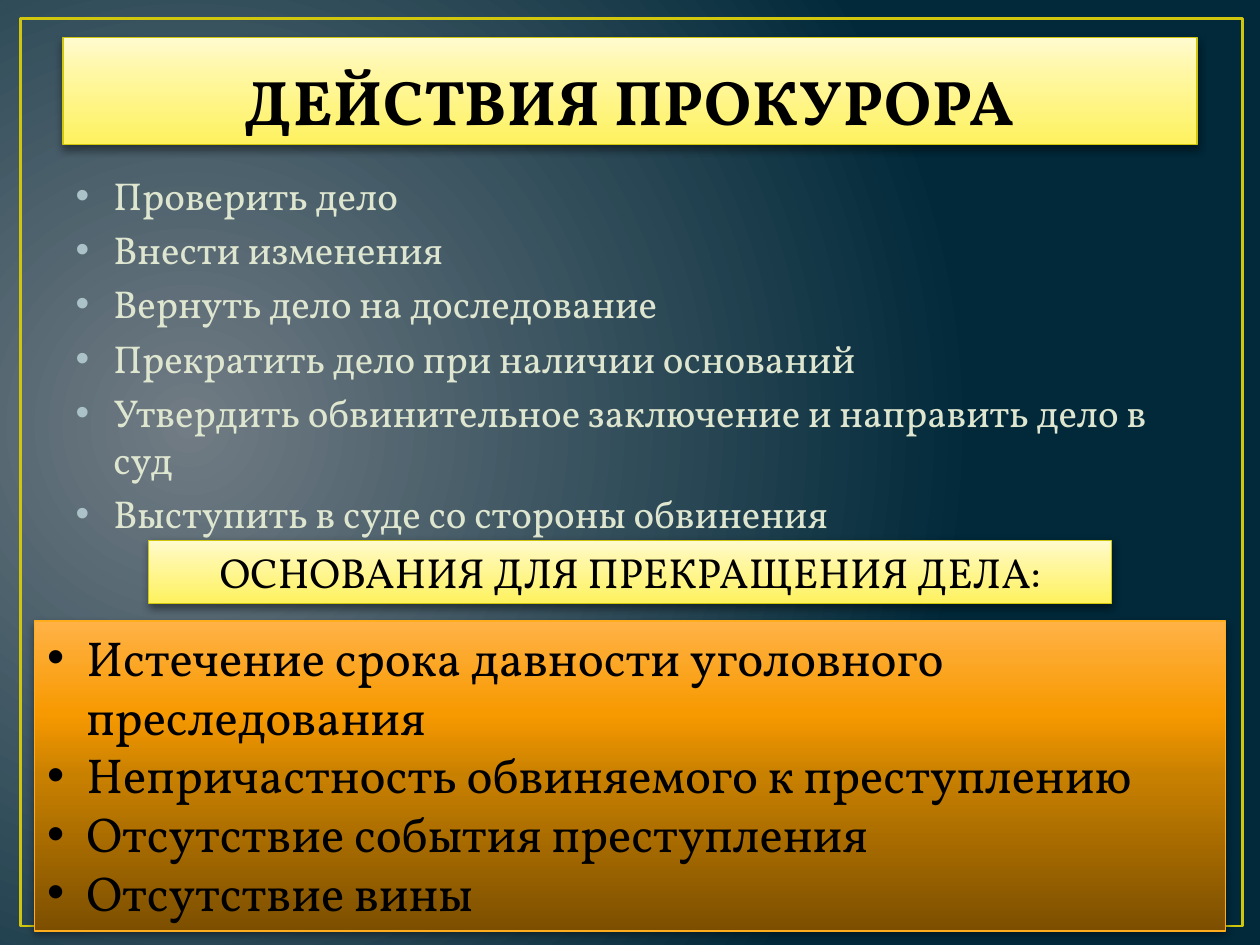
from lxml.etree import SubElement
from pptx import Presentation
from pptx.dml.color import RGBColor
from pptx.enum.shapes import MSO_SHAPE
from pptx.enum.text import MSO_ANCHOR, MSO_AUTO_SIZE, PP_ALIGN
from pptx.oxml import parse_xml
from pptx.oxml.ns import nsdecls, qn
from pptx.util import Cm, Pt

FONT = "Vollkorn"
COLORS = {
    "glow": "717C84",
    "night": "01293A",
    "frame": "CFC60D",
    "amber_edge": "FFAD1C",
    "bullet": "ACC2C9",
    "pale": "DFE6D0",
    "black": "000000",
}
YELLOW = [(0, "FEF25E"), (65, "FFF7A2"), (100, "FFFBCF")]
AMBER = [(0, "7C4F00"), (50, "C88000"), (70, "F79900"), (100, "FFB246")]

ACTIONS = [
    "Проверить дело",
    "Внести изменения",
    "Вернуть дело на доследование",
    "Прекратить дело при наличии оснований",
    "Утвердить обвинительное заключение и направить дело в суд",
    "Выступить в суде со стороны обвинения",
]
GROUNDS = [
    "Истечение срока давности уголовного преследования",
    "Непричастность обвиняемого к преступлению",
    "Отсутствие события преступления",
    "Отсутствие вины",
]


def color(name):
    return RGBColor.from_string(COLORS[name])


def gradient_xml(stops, direction):
    marks = "".join(
        f'<a:gs pos="{position * 1000}"><a:srgbClr val="{value}"/></a:gs>'
        for position, value in stops
    )
    return (f'<a:gradFill {nsdecls("a")} rotWithShape="1">'
            f"<a:gsLst>{marks}</a:gsLst>{direction}</a:gradFill>")


def paint_background(page):
    glow = gradient_xml(
        [(0, COLORS["glow"]), (100, COLORS["night"])],
        '<a:path path="circle">'
        '<a:fillToRect l="15000" t="50000" r="85000" b="60000"/></a:path>',
    )
    page._element.cSld.insert(0, parse_xml(
        f'<p:bg {nsdecls("p", "a")}><p:bgPr>{glow}<a:effectLst/></p:bgPr></p:bg>'))


def place(box, left, top, width, height):
    box.left, box.top, box.width, box.height = map(Cm, (left, top, width, height))


def style_panel(box, stops, edge):
    """Give the box a vertical gradient, a thin edge and a soft shadow."""
    properties = box._element.spPr
    properties.append(parse_xml(gradient_xml(stops, '<a:lin ang="16200000" scaled="0"/>')))
    box.line.color.rgb = color(edge)
    box.line.width = Pt(0.75)
    properties.append(parse_xml(
        f'<a:effectLst {nsdecls("a")}>'
        f'<a:outerShdw blurRad="{Pt(5)}" dist="{Pt(2)}" dir="5400000" rotWithShape="0">'
        f'<a:srgbClr val="{COLORS["black"]}"><a:alpha val="43000"/></a:srgbClr>'
        "</a:outerShdw></a:effectLst>"))


def add_panel(page, position, stops, edge):
    box = page.shapes.add_shape(MSO_SHAPE.RECTANGLE, 0, 0, 0, 0)
    place(box, *position)
    style_panel(box, stops, edge)
    return box


def add_frame(page):
    frame = page.shapes.add_shape(MSO_SHAPE.RECTANGLE, 0, 0, 0, 0)
    place(frame, 0.41, 0.38, 24.64, 18.29)
    frame.shadow.inherit = False
    frame.fill.background()
    frame.line.color.rgb = color("frame")
    frame.line.width = Pt(1.5)
    page.shapes._spTree.insert(2, frame._element)


def add_bullet(para, indent, bullet_color):
    properties = para._p.get_or_add_pPr()
    properties.set("marL", str(Cm(indent)))
    properties.set("indent", str(-Cm(indent)))
    tint = SubElement(properties, qn("a:buClr"))
    SubElement(tint, qn("a:srgbClr")).set("val", COLORS[bullet_color])
    SubElement(properties, qn("a:buFont")).set("typeface", "Arial")
    SubElement(properties, qn("a:buChar")).set("char", "•")


def write(box, lines, size, text_color="black", align=PP_ALIGN.LEFT,
          anchor=MSO_ANCHOR.TOP, bold=False, indent=0, bullet_color="black", before=0):
    """Fill the box with one paragraph a line; an indent makes it a list."""
    frame = box.text_frame
    frame.word_wrap = True
    frame.auto_size = MSO_AUTO_SIZE.NONE
    frame.vertical_anchor = anchor
    frame.text = "\n".join(lines)
    for para in frame.paragraphs:
        if indent:
            add_bullet(para, indent, bullet_color)
        para.alignment = align
        para.space_before = Pt(before)
        para.font.name = FONT
        para.font.size = Pt(size)
        para.font.bold = bold
        para.font.color.rgb = color(text_color)


def main():
    deck = Presentation()
    deck.slide_width, deck.slide_height = Cm(25.4), Cm(19.05)
    page = deck.slides.add_slide(deck.slide_layouts[1])
    paint_background(page)
    add_frame(page)

    title = page.shapes.title
    place(title, 1.27, 0.76, 22.86, 2.16)
    style_panel(title, YELLOW, "frame")
    write(title, ["ДЕЙСТВИЯ ПРОКУРОРА"], 36, align=PP_ALIGN.CENTER,
          anchor=MSO_ANCHOR.BOTTOM, bold=True)
    title.text_frame.paragraphs[0]._p.pPr.get_or_add_defRPr().set("spc", "50")

    actions = page.placeholders[1]
    place(actions, 1.27, 3.33, 22.86, 7.59)
    write(actions, ACTIONS, 22.2, "pale", indent=0.76, bullet_color="bullet", before=4.4)

    heading = add_panel(page, (3, 10.9, 19.41, 1.27), YELLOW, "frame")
    write(heading, ["ОСНОВАНИЯ ДЛЯ ПРЕКРАЩЕНИЯ ДЕЛА:"], 24, align=PP_ALIGN.CENTER)

    grounds = add_panel(page, (0.7, 12.52, 24, 6.25), AMBER, "amber_edge")
    write(grounds, GROUNDS, 28, indent=0.79)

    deck.save("out.pptx")


if __name__ == "__main__":
    main()
